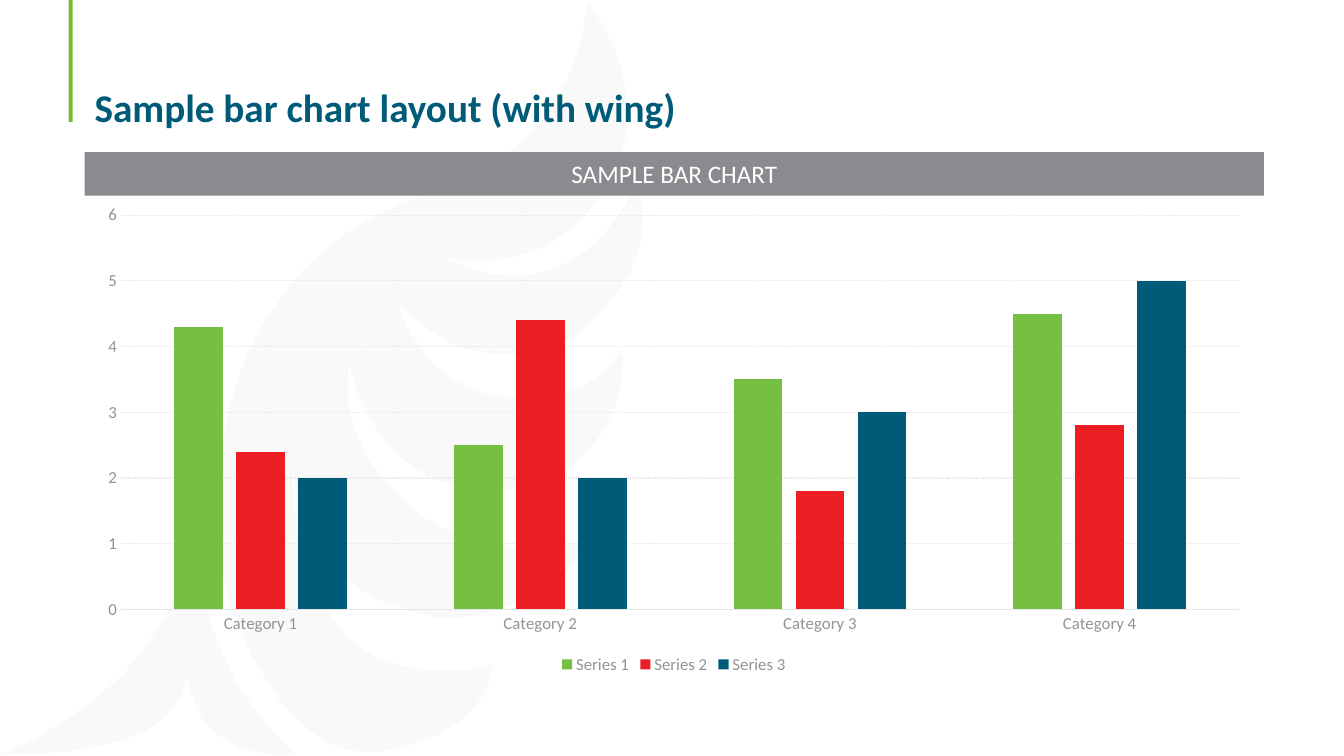
from lxml import etree
from pptx import Presentation
from pptx.chart.data import CategoryChartData as ChartData
from pptx.dml.color import RGBColor as RGB
from pptx.enum.chart import XL_CHART_TYPE as Kind, XL_LEGEND_POSITION as Spot, XL_TICK_MARK as Tick
from pptx.enum.dml import MSO_LINE as Dash
from pptx.enum.shapes import MSO_SHAPE as Shape
from pptx.enum.text import MSO_ANCHOR as Anchor, PP_ALIGN as Align
from pptx.oxml.ns import qn
from pptx.util import Pt

FONT = "Calibri"
STEPS = 10
HUES = {
    "rule": "78BB32", "wing": "E1E2E4", "band": "898B8E", "white": "FFFFFF",
    "label": "929395", "grid": "E6E6E7",
    "green": "75C043", "red": "ED1D24", "blue": "005B79",
}

# Each outline alternates curve ends and halfway points, in hundredths of an inch
WING = [
    [(490, 660), (455, 716), (377, 746), (294, 713), (228, 599), (216, 489), (235, 379),
     (309, 260), (430, 191), (537, 120), (583, 0), (623, 113), (582, 212), (520, 252),
     (441, 256), (550, 267), (631, 185), (630, 258), (571, 333), (480, 350), (395, 302),
     (432, 363), (489, 392), (566, 388), (617, 347), (603, 419), (546, 480), (416, 467),
     (346, 362), (359, 443), (420, 513), (497, 542), (580, 537), (531, 590), (437, 614),
     (328, 560), (290, 453), (298, 546), (322, 601), (386, 657), (490, 660)],
    [(293, 749), (212, 627), (199, 481), (144, 643), (0, 749), (144, 725), (185, 654),
     (213, 727), (293, 749)],
]


def write(frame, text, size, hue, bold=False, align=Align.LEFT, anchor=Anchor.MIDDLE, space=1.0):
    frame.word_wrap = True
    frame.vertical_anchor = anchor
    para = frame.paragraphs[0]
    para.text, para.alignment, para.line_spacing = text, align, space
    font = para.font
    font.name, font.size, font.bold = FONT, Pt(size), bold
    font.color.rgb = RGB.from_string(HUES[hue])


def paint(shape, hue):
    shape.shadow.inherit = False
    shape.fill.solid()
    shape.fill.fore_color.rgb = RGB.from_string(HUES[hue])
    shape.line.fill.background()


deck = Presentation()
deck.slide_width, deck.slide_height = Pt(960), Pt(540)
slide = deck.slides.add_slide(deck.slide_layouts[6])
shapes = slide.shapes

# Backdrop: green rule and pale wing
rule = shapes.add_shape(Shape.RECTANGLE, Pt(49), Pt(0), Pt(3), Pt(87))
paint(rule, "rule")

pen = shapes.build_freeform(*WING[0][0], scale=Pt(0.72))
for outline in WING:
    pen.move_to(*outline[0])
    dots = []
    for start, mid, end in zip(outline[::2], outline[1::2], outline[2::2]):
        for step in range(1, STEPS + 1):
            t = step / STEPS
            # Weights of the parabola through start, mid and end
            a, b, c = (1 - t) * (1 - 2 * t), 4 * t * (1 - t), t * (2 * t - 1)
            dots.append([a * p + b * q + c * r for p, q, r in zip(start, mid, end)])
    pen.add_line_segments(dots, close=True)
wing = pen.convert_to_shape()
paint(wing, "wing")
tint = wing.element.spPr.find(qn("a:solidFill"))[0]
etree.SubElement(tint, qn("a:alpha")).set("val", "20000")

# Title
title = shapes.add_textbox(Pt(60.5), Pt(29.5), Pt(862.5), Pt(67.7))
write(title.text_frame, "Sample bar chart layout (with wing)", 28, "blue",
      bold=True, anchor=Anchor.BOTTOM, space=0.9)

# Chart
data = ChartData()
data.categories = [f"Category {n}" for n in range(1, 5)]
data.add_series("Series 1", (4.3, 2.5, 3.5, 4.5))
data.add_series("Series 2", (2.4, 4.4, 1.8, 2.8))
data.add_series("Series 3", (2, 2, 3, 5))
chart = shapes.add_chart(Kind.COLUMN_CLUSTERED, Pt(60.5), Pt(139.7), Pt(841.7), Pt(344.9), data).chart
chart.has_title = False
chart.font.name, chart.font.size = FONT, Pt(12)
chart.font.color.rgb = RGB.from_string(HUES["label"])

plot = chart.plots[0]
plot.vary_by_categories = False
plot.gap_width, plot.overlap = 219, -27
for series, hue in zip(plot.series, ("green", "red", "blue")):
    series.format.fill.solid()
    series.format.fill.fore_color.rgb = RGB.from_string(HUES[hue])

cats, vals = chart.category_axis, chart.value_axis
for axis in (cats, vals):
    axis.major_tick_mark = axis.minor_tick_mark = Tick.NONE
vals.minimum_scale, vals.maximum_scale, vals.major_unit = 0, 6, 1
vals.has_major_gridlines = True
vals.format.line.fill.background()
grid = vals.major_gridlines.format.line
for line in (cats.format.line, grid):
    line.width = Pt(0.75)
    line.color.rgb = RGB.from_string(HUES["grid"])
grid.dash_style = Dash.ROUND_DOT

chart.has_legend = True
chart.legend.position = Spot.BOTTOM
chart.legend.include_in_layout = False

# Heading band above the chart
band = shapes.add_shape(Shape.RECTANGLE, Pt(60.5), Pt(108.7), Pt(842.4), Pt(31))
paint(band, "band")
write(band.text_frame, "SAMPLE BAR CHART", 18, "white", align=Align.CENTER)

deck.save("out.pptx")
